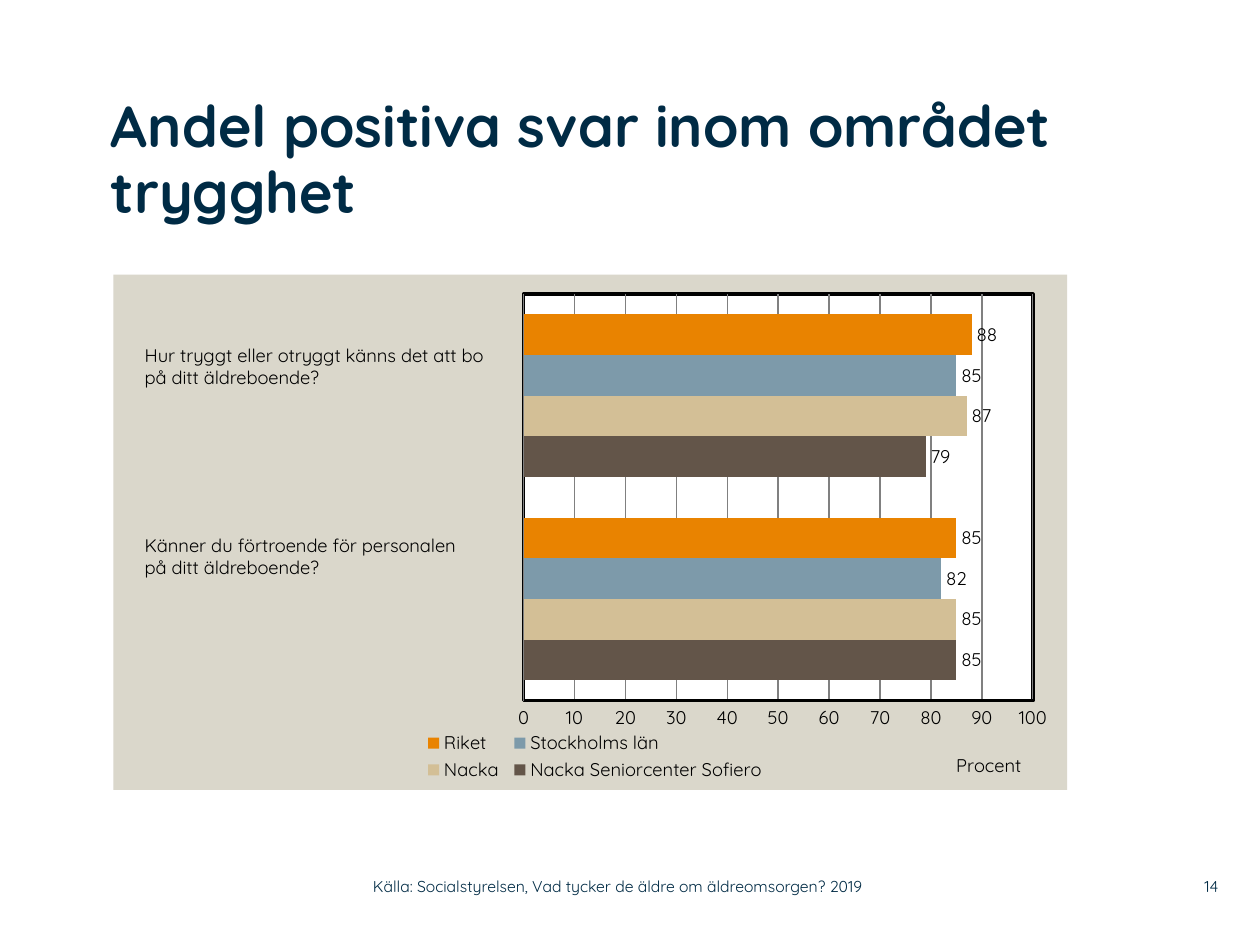
from lxml import etree
from pptx import Presentation
from pptx.chart.data import CategoryChartData
from pptx.dml.color import RGBColor
from pptx.enum.chart import XL_CHART_TYPE, XL_LABEL_POSITION, XL_LEGEND_POSITION, XL_TICK_MARK
from pptx.enum.text import MSO_ANCHOR, PP_ALIGN
from pptx.oxml import parse_xml
from pptx.oxml.ns import nsdecls, qn
from pptx.util import Inches, Pt

BAR = XL_CHART_TYPE.BAR_CLUSTERED
OUTSIDE_END = XL_LABEL_POSITION.OUTSIDE_END
BOTTOM = XL_LEGEND_POSITION.BOTTOM
NO_TICK = XL_TICK_MARK.NONE
TOP, MIDDLE = MSO_ANCHOR.TOP, MSO_ANCHOR.MIDDLE
LEFT, RIGHT = PP_ALIGN.LEFT, PP_ALIGN.RIGHT

FONT = "Quicksand"
COLORS = {
    "navy": "002B45",
    "black": "000000",
    "panel": "DAD7CB",
    "white": "FFFFFF",
    "grid": "808080",
    "brown": "635549",
    "sand": "D3BF96",
    "blue": "7D9AAA",
    "orange": "E98300",
}
SERIES = [
    ("Nacka Seniorcenter Sofiero", (85, 79), "brown"),
    ("Nacka", (85, 87), "sand"),
    ("Stockholms län", (82, 85), "blue"),
    ("Riket", (85, 88), "orange"),
]


def rgb(name):
    return RGBColor.from_string(COLORS[name])


def set_font(font, size, color="black", bold=False):
    font.name = FONT
    font.size = Pt(size)
    font.bold = bold
    font.color.rgb = rgb(color)


def add_text(slide, text, left, top, width, height, size=10.5, color="black",
             bold=False, align=LEFT, anchor=TOP, inset=(0, 0), spacing=None):
    """Add a text box; each line of text becomes a paragraph."""
    sp = slide.shapes.add_textbox(Inches(left), Inches(top), Inches(width), Inches(height))
    tf = sp.text_frame
    tf.word_wrap = True
    tf.vertical_anchor = anchor
    tf.margin_left = tf.margin_right = Inches(inset[0])
    tf.margin_top = tf.margin_bottom = Inches(inset[1])
    tf.text = text
    for p in tf.paragraphs:
        p.alignment = align
        if spacing:
            p.line_spacing = spacing
        set_font(p.runs[0].font, size, color, bold)


def set_layout(element, index, x, y, w=None, h=None, inner=False):
    """Place a chart part by fractions of the chart's size."""
    for old in element.findall(qn("c:layout")):
        element.remove(old)
    layout = etree.Element(qn("c:layout"))
    manual = etree.SubElement(layout, qn("c:manualLayout"))
    values = [("layoutTarget", "inner" if inner else None),
              ("xMode", "edge"), ("yMode", "edge"),
              ("x", x), ("y", y), ("w", w), ("h", h)]
    for tag, value in values:
        if value is not None:
            etree.SubElement(manual, qn(f"c:{tag}")).set("val", str(value))
    element.insert(index, layout)


def area_format(fill, line=None, width=0):
    """Return the fill and outline element of a chart area."""
    stroke = "<a:noFill/>"
    if line:
        stroke = f'<a:solidFill><a:srgbClr val="{COLORS[line]}"/></a:solidFill>'
    return parse_xml(
        f'<c:spPr {nsdecls("c", "a")}>'
        f'<a:solidFill><a:srgbClr val="{COLORS[fill]}"/></a:solidFill>'
        f'<a:ln w="{Pt(width)}">{stroke}</a:ln></c:spPr>')


def format_value_axis(axis):
    axis.minimum_scale, axis.maximum_scale, axis.major_unit = 0, 100, 10
    axis.major_tick_mark = axis.minor_tick_mark = NO_TICK
    axis.format.line.color.rgb = rgb("black")
    axis.format.line.width = Pt(2)
    axis.has_major_gridlines = True
    axis.major_gridlines.format.line.color.rgb = rgb("grid")
    axis.major_gridlines.format.line.width = Pt(0.75)
    set_font(axis.tick_labels.font, 10.5)
    title = axis.axis_title
    title.text_frame.text = "Procent"
    set_font(title.text_frame.paragraphs[0].runs[0].font, 10.5)
    set_layout(title._element, 1, 0.88, 0.92)


def format_series(series, color):
    series.format.fill.solid()
    series.format.fill.fore_color.rgb = rgb(color)
    labels = series.data_labels
    labels.show_value = True
    labels.position = OUTSIDE_END
    set_font(labels.font, 10.5)


def add_bar_chart(slide):
    data = CategoryChartData()
    data.categories = ["1", "2"]
    for name, values, _ in SERIES:
        data.add_series(name, values)
    chart = slide.shapes.add_chart(
        BAR, Inches(0.9), Inches(2.18), Inches(7.57), Inches(4.09), data).chart
    chart.has_title = False
    set_font(chart.font, 10.5)

    plot = chart.plots[0]
    plot.gap_width = 100
    plot.overlap = 0
    plot.vary_by_categories = False
    for series, (_, _, color) in zip(plot.series, SERIES):
        format_series(series, color)

    chart.category_axis.visible = False
    format_value_axis(chart.value_axis)

    chart.has_legend = True
    chart.legend.position = BOTTOM
    chart.legend.include_in_layout = False
    set_font(chart.legend.font, 10.5)
    set_layout(chart.legend._element, 1, 0.32, 0.88, 0.37, 0.11)

    chart_element = chart._chartSpace.find(qn("c:chart"))
    chart_element.addnext(area_format("panel"))
    plot_area = chart_element.find(qn("c:plotArea"))
    set_layout(plot_area, 0, 0.43, 0.038, 0.534, 0.789, inner=True)
    plot_area.append(area_format("white", "black", 2))


def main():
    prs = Presentation()
    prs.slide_width, prs.slide_height = Inches(10), Inches(7.5)
    slide = prs.slides.add_slide(prs.slide_layouts[6])

    add_bar_chart(slide)
    add_text(slide, "Andel positiva svar inom området trygghet", 0.88, 0.75, 7.6, 1.42,
             size=33, color="navy", bold=True, spacing=0.95)
    add_text(slide, "Hur tryggt eller otryggt känns det att bo på ditt äldreboende?",
             1.05, 2.68, 2.94, 0.45, inset=(0.1, 0.05))
    add_text(slide, "Känner du förtroende för personalen\npå ditt äldreboende?",
             1.05, 4.19, 2.93, 0.45, inset=(0.1, 0.05))
    add_text(slide, "14", 9.2, 6.89, 0.47, 0.29, size=9, color="navy",
             align=RIGHT, anchor=MIDDLE)
    add_text(slide, "Källa: Socialstyrelsen, Vad tycker de äldre om äldreomsorgen? 2019",
             2.96, 6.89, 4.43, 0.29, size=9, color="navy", anchor=MIDDLE)
    prs.save("out.pptx")


if __name__ == "__main__":
    main()
